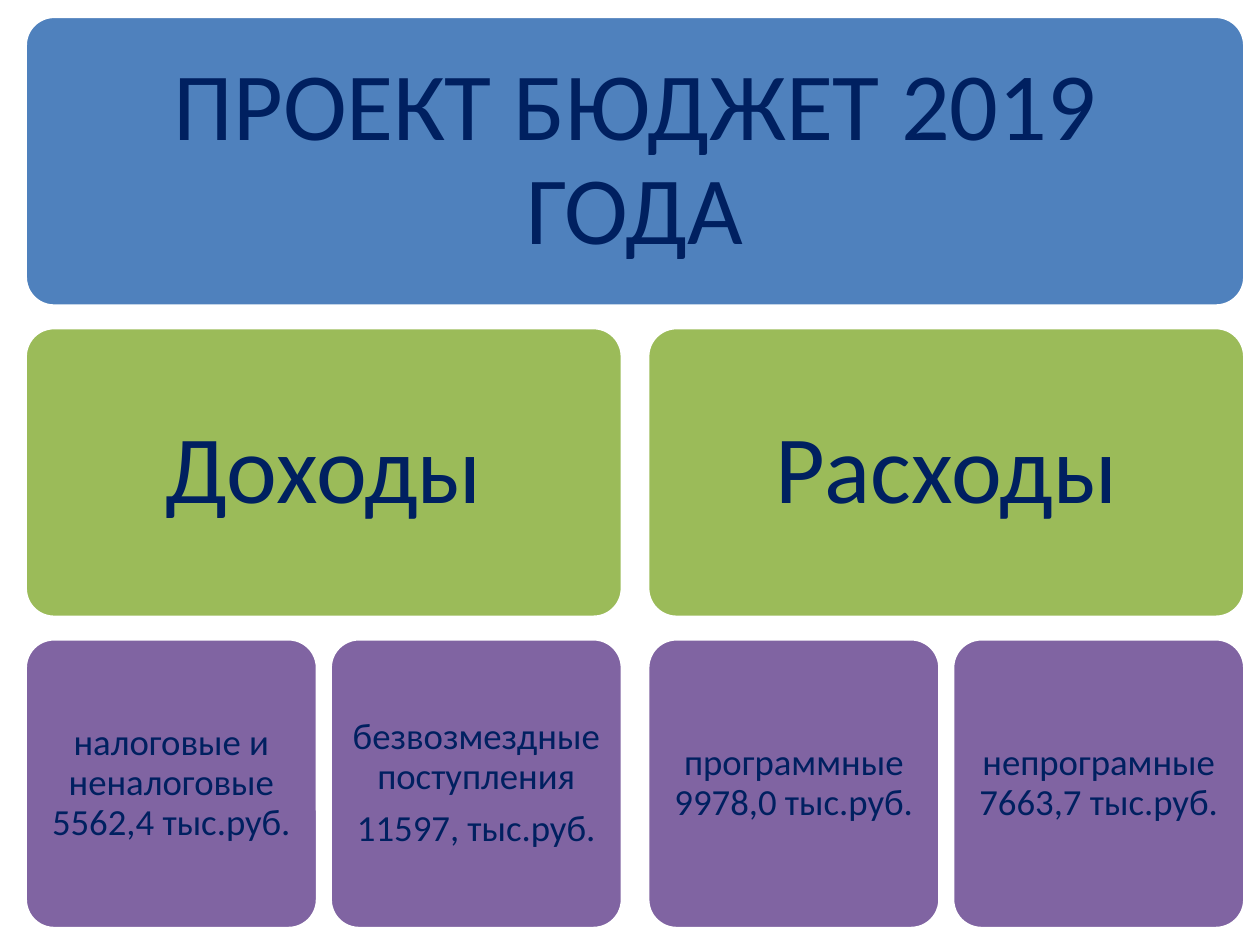
from pptx import Presentation
from pptx.dml.color import RGBColor
from pptx.enum.shapes import MSO_SHAPE
from pptx.enum.text import MSO_ANCHOR, MSO_AUTO_SIZE, PP_ALIGN
from pptx.util import Inches, Pt

# Content: heading, then each branch with its items (a list of paragraphs each)
HEADING = "ПРОЕКТ БЮДЖЕТ 2019 ГОДА"
BRANCHES = [
    ("Доходы", [
        ["налоговые и неналоговые 5562,4 тыс.руб."],
        ["безвозмездные поступления", "11597, тыс.руб."],
    ]),
    ("Расходы", [
        ["программные 9978,0 тыс.руб."],
        ["непрограмные 7663,7 тыс.руб."],
    ]),
]

# Look
BLUE, GREEN, PURPLE = "4F81BD", "9BBB59", "8064A2"
NAVY, WHITE = "002060", "FFFFFF"
LARGE = {"size": 55, "inset": 0.23}
SMALL = {"size": 21, "inset": 0.09}

# Grid, in inches
LEFT, TOP, WIDTH = 0.2, 0.13, 9.68
BOX_HEIGHT, ROW_STEP = 2.3, 2.47
BRANCH_GAP, ITEM_GAP = 0.2, 0.1
CORNER = 0.1
TEXT_MARGIN = 0.07


def color(value):
    return RGBColor.from_string(value)


def write(holder, paragraphs, size, inset):
    frame = holder.text_frame
    frame.word_wrap = True
    frame.auto_size = MSO_AUTO_SIZE.NONE
    frame.vertical_anchor = MSO_ANCHOR.MIDDLE
    frame.margin_left = frame.margin_right = Inches(inset)
    frame.margin_top = frame.margin_bottom = Inches(inset)
    frame.text = "\n".join(paragraphs)
    for paragraph in frame.paragraphs:
        paragraph.alignment = PP_ALIGN.CENTER
        paragraph.line_spacing = 0.9
        paragraph.space_after = Pt(round(size * 0.35, 2))
        font = paragraph.runs[0].font
        font.name, font.size = "Calibri", Pt(size)
        font.color.rgb = color(NAVY)


def add_box(slide, left, row, width, fill):
    box = slide.shapes.add_shape(
        MSO_SHAPE.ROUNDED_RECTANGLE, Inches(left), Inches(TOP + row * ROW_STEP),
        Inches(width), Inches(BOX_HEIGHT))
    box.adjustments[0] = CORNER
    box.shadow.inherit = False
    box.fill.solid()
    box.fill.fore_color.rgb = color(fill)
    box.line.color.rgb = color(WHITE)
    box.line.width = Pt(2)
    return box


def split(left, width, count, gap):
    """Left edges and common width of equal parts."""
    part = (width - gap * (count - 1)) / count
    return [left + i * (part + gap) for i in range(count)], part


def main():
    deck = Presentation()
    deck.slide_width, deck.slide_height = Inches(10), Inches(7.5)
    slide = deck.slides.add_slide(deck.slide_layouts[5])

    # Heading: the title lies on top of its box
    add_box(slide, LEFT, 0, WIDTH, BLUE)
    title = slide.shapes.title
    title.left, title.top = Inches(LEFT + TEXT_MARGIN), Inches(TOP + TEXT_MARGIN)
    title.width = Inches(WIDTH - 2 * TEXT_MARGIN)
    title.height = Inches(BOX_HEIGHT - 2 * TEXT_MARGIN)
    title.element.getparent().append(title.element)
    write(title, [HEADING], **LARGE)

    # Branches with their items below
    branch_lefts, branch_width = split(LEFT, WIDTH, len(BRANCHES), BRANCH_GAP)
    for branch_left, (name, items) in zip(branch_lefts, BRANCHES):
        write(add_box(slide, branch_left, 1, branch_width, GREEN), [name], **LARGE)
        item_lefts, item_width = split(branch_left, branch_width, len(items), ITEM_GAP)
        for item_left, paragraphs in zip(item_lefts, items):
            write(add_box(slide, item_left, 2, item_width, PURPLE), paragraphs, **SMALL)

    deck.save("out.pptx")


if __name__ == "__main__":
    main()
